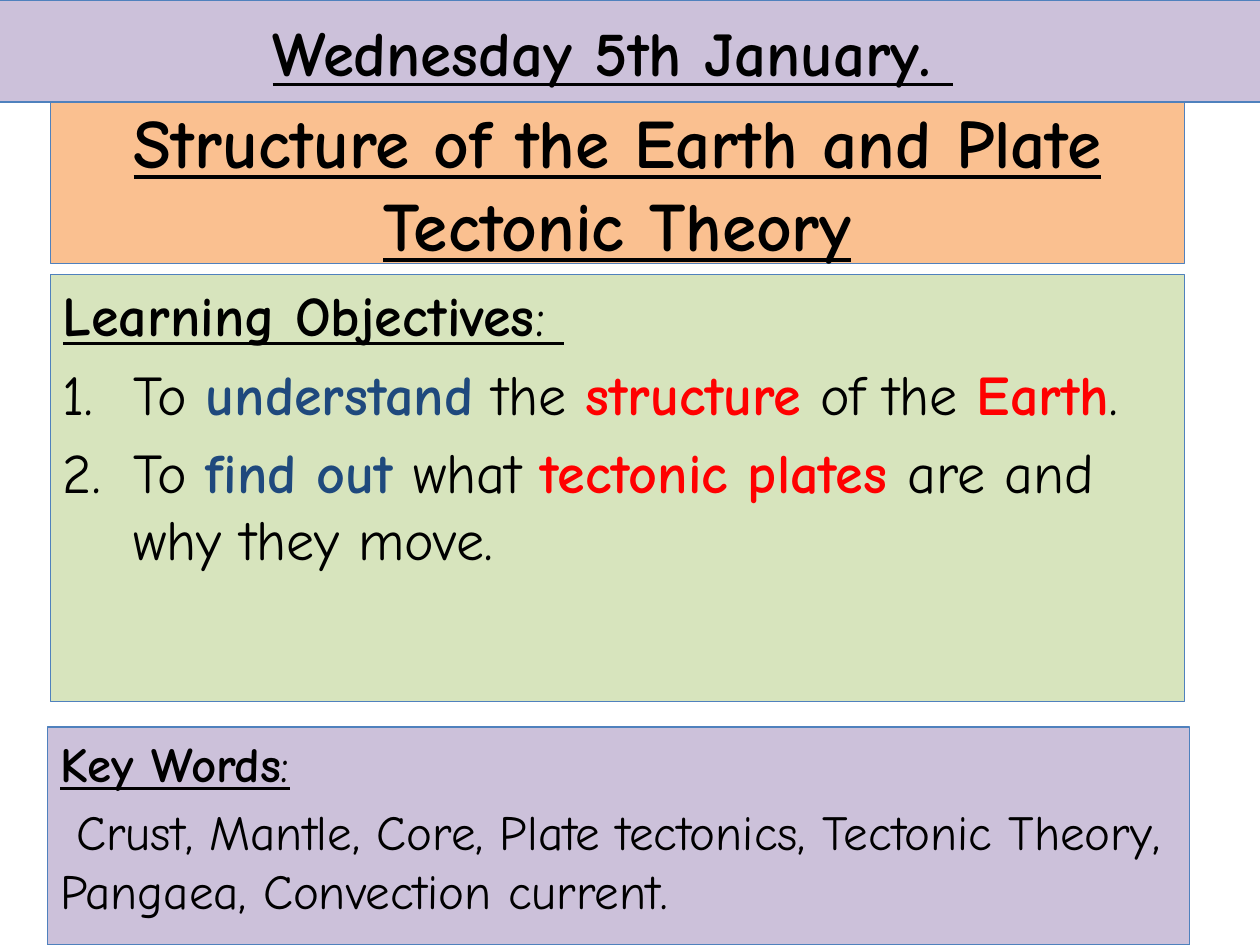
from lxml.etree import SubElement
from pptx import Presentation
from pptx.dml.color import RGBColor
from pptx.enum.shapes import MSO_SHAPE as Shape
from pptx.enum.text import MSO_ANCHOR as Anchor, MSO_AUTO_SIZE as AutoSize, PP_ALIGN as Align
from pptx.oxml.ns import qn
from pptx.util import Inches, Pt

FONT = "Comic Neue"
COLORS = {
    "text": "000000",
    "verb": "1F497D",
    "term": "FF0000",
    "border": "4F81BD",
    "lilac": "CCC1DA",
    "orange": "FAC090",
    "green": "D7E4BD",
}


def color(name):
    return RGBColor.from_string(COLORS[name])


def style_panel(panel, fill, anchor=Anchor.TOP):
    """Give a panel its fill, thin border and text frame settings."""
    panel.fill.solid()
    panel.fill.fore_color.rgb = color(fill)
    panel.line.color.rgb = color("border")
    panel.line.width = Pt(0.75)
    frame = panel.text_frame
    frame.word_wrap = True
    frame.auto_size = AutoSize.NONE
    frame.vertical_anchor = anchor
    return frame


def add_panel(page, left, top, width, height, fill, anchor=Anchor.TOP):
    panel = page.shapes.add_shape(
        Shape.RECTANGLE, Inches(left), Inches(top), Inches(width), Inches(height))
    panel.shadow.inherit = False
    return style_panel(panel, fill, anchor)


def format_para(para, size, align=Align.LEFT):
    para.alignment = align
    para.font.name = FONT
    para.font.size = Pt(size)
    para.font.color.rgb = color("text")


def write_heading(para, text, size):
    """Centred, bold and underlined line."""
    format_para(para, size, Align.CENTER)
    para.font.bold = para.font.underline = True
    para.text = text


def write_label(para, text, colon, size):
    """Underlined label whose colon is not bold."""
    format_para(para, size)
    para.font.underline = True
    para.space_before = Pt(size * 0.2)
    for part, bold in ((text, True), (colon, False)):
        span = para.add_run()
        span.text = part
        span.font.bold = bold


def write_body(para, spans, size):
    """Plain text in which coloured spans are bold."""
    format_para(para, size)
    para.space_before = Pt(size * 0.2)
    for text, tone in spans:
        span = para.add_run()
        span.text = text
        span.font.bold = tone != "text"
        span.font.color.rgb = color(tone)


def number_para(para, indent):
    props = para._p.get_or_add_pPr()
    props.set("marL", str(Inches(indent)))
    props.set("indent", str(-Inches(indent)))
    bullet = SubElement(props, qn("a:buAutoNum"), type="arabicPeriod")
    # The bullet has to come before the default run properties
    props.find(qn("a:defRPr")).addprevious(bullet)


def add_title(page):
    title = page.shapes.title
    title.left, title.top = Inches(0.4), Inches(0.8)
    title.width, title.height = Inches(9), Inches(1.29)
    frame = style_panel(title, "orange", Anchor.MIDDLE)
    write_heading(frame.paragraphs[0],
                  "Structure of the Earth and Plate Tectonic Theory", 39.6)


def add_objectives(page):
    objectives = [
        [("To ", "text"), ("understand", "verb"), (" the ", "text"),
         ("structure", "term"), (" of the ", "text"), ("Earth", "term"), (".", "text")],
        [("To ", "text"), ("find out ", "verb"), ("what ", "text"),
         ("tectonic plates ", "term"), ("are and why they move.", "text")],
    ]
    frame = add_panel(page, 0.4, 2.18, 9, 3.39, "green")
    write_label(frame.paragraphs[0], "Learning Objectives", ": ", 32)
    for spans in objectives:
        para = frame.add_paragraph()
        write_body(para, spans, 32)
        number_para(para, 0.56)


def add_key_words(page):
    words = " Crust, Mantle, Core, Plate tectonics, Tectonic Theory, Pangaea, Convection current."
    frame = add_panel(page, 0.38, 5.77, 9.06, 1.73, "lilac")
    write_label(frame.paragraphs[0], "Key Words", ":", 28)
    write_body(frame.add_paragraph(), [(words, "text")], 28)


def main():
    deck = Presentation()
    deck.slide_width, deck.slide_height = Inches(10), Inches(7.5)
    page = deck.slides.add_slide(deck.slide_layouts[5])

    # Date band across the top
    band = add_panel(page, -0.28, 0, 10.29, 0.81, "lilac", Anchor.MIDDLE)
    write_heading(band.paragraphs[0], "Wednesday 5th January. ", 36)

    # Lesson title and content panels
    add_title(page)
    add_objectives(page)
    add_key_words(page)

    deck.save("out.pptx")


if __name__ == "__main__":
    main()
